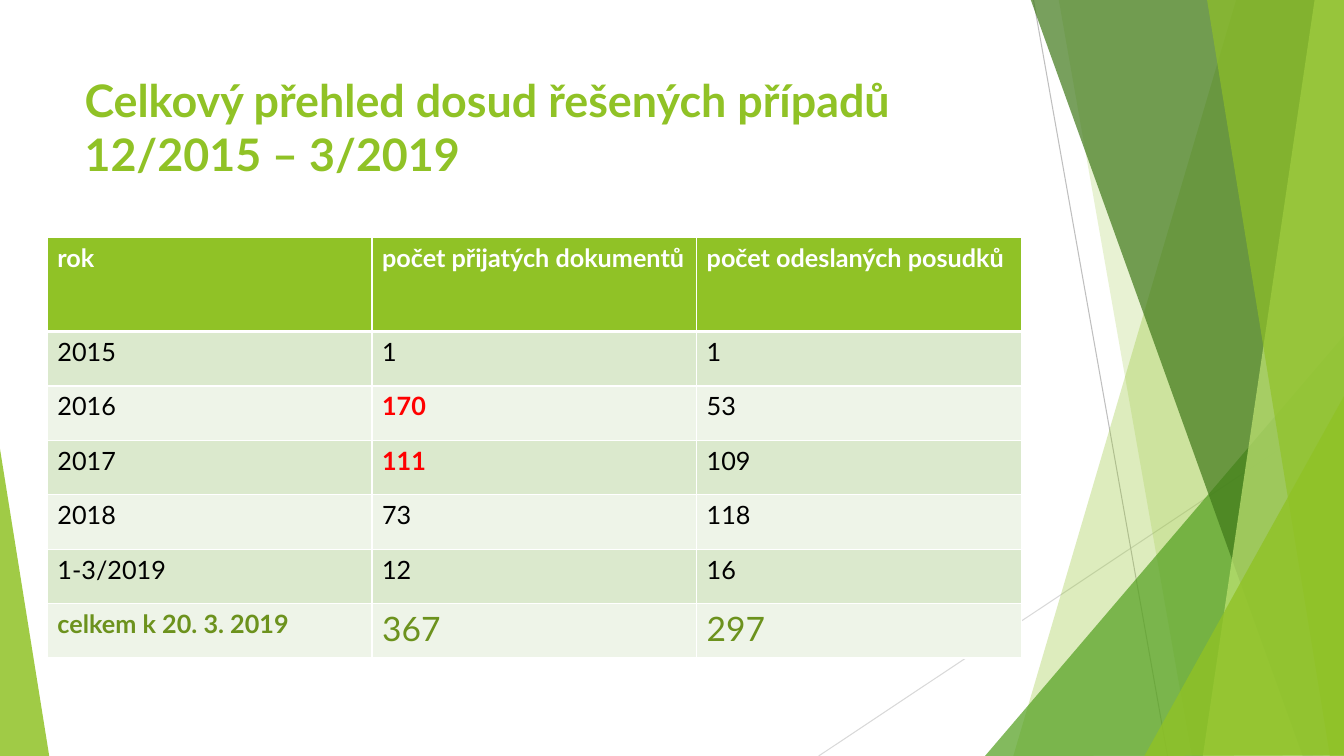
from lxml import etree
from pptx import Presentation
from pptx.dml.color import RGBColor
from pptx.enum import shapes, text
from pptx.oxml.ns import qn
from pptx.util import Inches, Pt

COLORS = {
    "lime": "90C226", "green": "54A021", "forest": "3F7819", "pale": "C0E474",
    "olive": "6C921D", "red": "FF0000", "black": "000000", "white": "FFFFFF",
    "band_dark": "DBE9CD", "band_light": "EEF4E8",
    "gray_light": "D9D9D9", "gray": "BFBFBF",
}


def style_run(run, size, color, bold):
    run.font.name = "Lato"
    run.font.size = Pt(size)
    run.font.bold = bold
    run.font.color.rgb = RGBColor.from_string(COLORS[color])


def add_border(cell, side, width):
    """Draw a white line on one side (L, R, T or B) of a table cell."""
    line = etree.SubElement(cell._tc.get_or_add_tcPr(), qn(f"a:ln{side}"), w=str(Pt(width)))
    fill = etree.SubElement(line, qn("a:solidFill"))
    etree.SubElement(fill, qn("a:srgbClr"), val=COLORS["white"])


prs = Presentation()
prs.slide_width = Inches(13.33)
prs.slide_height = Inches(7.5)
slide = prs.slides.add_slide(prs.slide_layouts[6])

# Thin rays behind the facets
rays = [
    (8.12, 7.5, 13.33, 4.03, "gray_light"),
    (10.25, 0, 11.58, 7.5, "gray"),
]
for x1, y1, x2, y2, color in rays:
    ray = slide.shapes.add_connector(
        shapes.MSO_CONNECTOR.STRAIGHT, Inches(x1), Inches(y1), Inches(x2), Inches(y2))
    ray.line.color.rgb = RGBColor.from_string(COLORS[color])
    ray.line.width = Pt(0.75)
    etree.SubElement(ray._element.spPr, qn("a:effectLst"))

# Translucent facets: colour, opacity in percent, corners
facets = [
    ("lime", 30, [(12.26, 0), (10.05, 7.5), (13.33, 7.49), (13.34, -0.01)]),
    ("lime", 20, [(10.5, -0.01), (11.82, 7.5), (13.34, 7.5), (13.33, -0.01)]),
    ("green", 72, [(9.77, 7.5), (13.33, 3.33), (13.34, 7.5)]),
    ("forest", 70, [(10.22, -0.01), (12.92, 7.5), (13.34, 7.49), (13.34, -0.01)]),
    ("pale", 70, [(13.04, -0.01), (11.93, 7.5), (13.34, 7.5), (13.33, -0.01)]),
    ("lime", 65, [(11.97, -0.01), (13.19, 7.5), (13.36, 7.5), (13.34, -0.01)]),
    ("lime", 80, [(11.35, 7.5), (13.33, 3.93), (13.34, 7.49)]),
    ("lime", 85, [(-0.01, 4.39), (0.49, 7.51), (-0.01, 7.5)]),
]
for color, opacity, corners in facets:
    points = [(Inches(x), Inches(y)) for x, y in corners]
    builder = slide.shapes.build_freeform(*points[0])
    builder.add_line_segments(points[1:], close=True)
    facet = builder.convert_to_shape()
    facet.shadow.inherit = False
    facet.line.fill.background()
    facet.fill.solid()
    facet.fill.fore_color.rgb = RGBColor.from_string(COLORS[color])
    tint = facet._element.spPr.find(".//" + qn("a:srgbClr"))
    etree.SubElement(tint, qn("a:alpha"), val=str(opacity * 1000))

title = slide.shapes.add_textbox(Inches(0.74), Inches(0.67), Inches(9.4), Inches(1.44))
title.text_frame.word_wrap = True
title.text_frame.vertical_anchor = text.MSO_ANCHOR.TOP
title.text_frame.text = "Celkový přehled dosud řešených případů 12/2015 – 3/2019"
style_run(title.text_frame.paragraphs[0].runs[0], 32, "lime", True)

case_rows = [
    ("rok", "počet přijatých dokumentů", "počet odeslaných posudků"),
    ("2015", "1", "1"),
    ("2016", "170", "53"),
    ("2017", "111", "109"),
    ("2018", "73", "118"),
    ("1-3/2019", "12", "16"),
    ("celkem k 20. 3. 2019", "367", "297"),
]
total_row = len(case_rows) - 1
highlights = {(2, 1), (3, 1)}

cases = slide.shapes.add_table(
    len(case_rows), 3, Inches(0.47), Inches(2.36), Inches(9.67), Inches(4.17)).table
for column in cases.columns:
    column.width = Inches(3.22)
for r, values in enumerate(case_rows):
    cases.rows[r].height = Inches(0.93 if r == 0 else 0.54)
    band = "lime" if r == 0 else "band_dark" if r % 2 else "band_light"
    for c, value in enumerate(values):
        cell = cases.cell(r, c)
        for side in "LRTB":
            under_header = (r, side) in {(0, "B"), (1, "T")}
            add_border(cell, side, 3 if under_header else 1)
        cell.fill.solid()
        cell.fill.fore_color.rgb = RGBColor.from_string(COLORS[band])
        cell.text_frame.text = value

        size, color, bold = 18, "black", False
        if r == 0:
            color, bold = "white", True
        elif r == total_row:
            size, color, bold = (18 if c == 0 else 24), "olive", c == 0
        elif (r, c) in highlights:
            color, bold = "red", True
        style_run(cell.text_frame.paragraphs[0].runs[0], size, color, bold)

prs.save("out.pptx")
